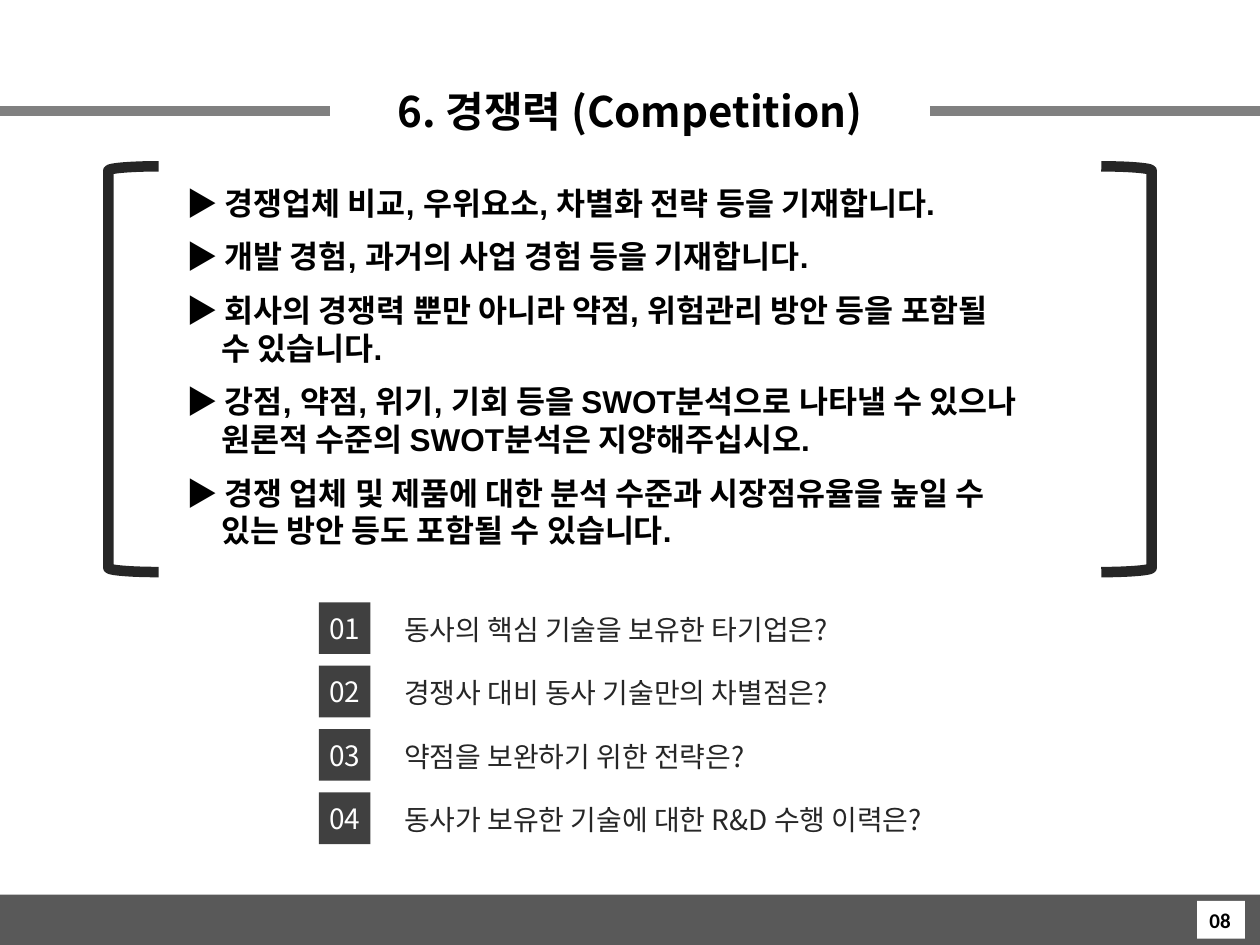
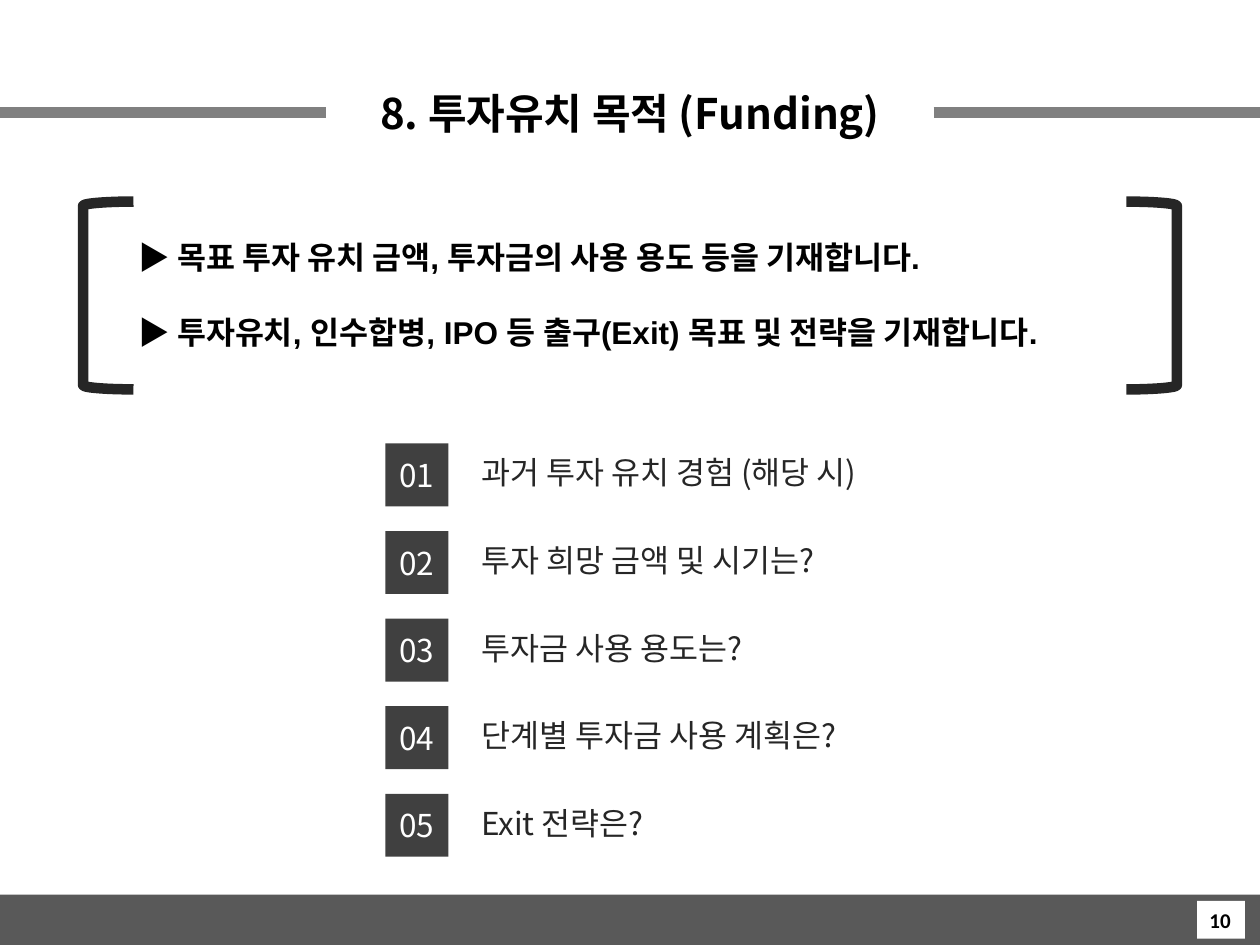
from pptx import Presentation
from pptx.dml.color import RGBColor
from pptx.enum.shapes import MSO_CONNECTOR as Connector, MSO_SHAPE as Shape
from pptx.enum.text import MSO_ANCHOR as Anchor, PP_ALIGN as Align
from pptx.oxml.ns import qn
from pptx.util import Inches, Pt
from lxml.etree import SubElement

BLACK = RGBColor(0x00, 0x00, 0x00)
WHITE = RGBColor(0xFF, 0xFF, 0xFF)
INK = RGBColor(0x26, 0x26, 0x26)
TILE = RGBColor(0x40, 0x40, 0x40)
BAND = RGBColor(0x59, 0x59, 0x59)
RULE = RGBColor(0x80, 0x80, 0x80)

COLS, ROWS = 100, 75
SANS, BODY, DIGITS = "Noto Sans CJK KR", "Arial", "Calibri"


class Deck:
    def __init__(self):
        self.prs = Presentation()
        self.prs.slide_width, self.prs.slide_height = Inches(10), Inches(7.5)
        self.s = None

    def x(self, cols):
        return round(self.prs.slide_width * cols / COLS)

    def y(self, rows):
        return round(self.prs.slide_height * rows / ROWS)

    def box(self, left, top, width, height):
        return self.x(left), self.y(top), self.x(width), self.y(height)

    def new_slide(self):
        self.s = self.prs.slides.add_slide(self.prs.slide_layouts[6])

    def style(self, p, size, color, name=SANS, bold=False, align=Align.LEFT):
        p.alignment = align
        f = p.font
        f.size, f.bold, f.name = Pt(size), bold, name
        f.color.rgb = color
        SubElement(f._element, qn("a:ea"), typeface=SANS)

    def rect(self, at, fill):
        sp = self.s.shapes.add_shape(Shape.RECTANGLE, *self.box(*at))
        sp.shadow.inherit = False
        sp.fill.solid()
        sp.fill.fore_color.rgb = fill
        sp.line.fill.background()
        return sp

    def label(self, at, fill, text, size, color, **style):
        tf = self.rect(at, fill).text_frame
        tf.word_wrap = True
        tf.vertical_anchor = Anchor.MIDDLE
        tf.text = text
        self.style(tf.paragraphs[0], size, color, **style)
        return tf

    def text(self, at, paragraphs, size, color, gap=0, hang=0, **style):
        tf = self.s.shapes.add_textbox(*self.box(*at)).text_frame
        tf.word_wrap = True
        tf.text = "\n".join(paragraphs)
        for i, p in enumerate(tf.paragraphs):
            self.style(p, size, color, **style)
            p.space_before = Pt(gap if i else 0)
            if hang:
                pPr = p._p.get_or_add_pPr()
                pPr.set("marL", str(self.x(hang)))
                pPr.set("indent", str(-self.x(hang)))

    def rule(self, start, end, row):
        ln = self.s.shapes.add_connector(
            Connector.STRAIGHT, self.x(start), self.y(row), self.x(end), self.y(row))
        ln.line.color.rgb = RULE
        ln.line.width = Pt(6)
        SubElement(ln._element.spPr, qn("a:effectLst"))

    def bracket(self, at, rotation):
        sp = self.s.shapes.add_shape(Shape.LEFT_BRACKET, *self.box(*at))
        sp.shadow.inherit = False
        sp.fill.background()
        sp.line.color.rgb = INK
        sp.line.width = Pt(6)
        sp.rotation = rotation

    def title(self, text, row, width, rule_length):
        self.label(((COLS - width) / 2, row - 2.5, width, 5), WHITE, text, 24, BLACK,
                   bold=True, align=Align.CENTER)
        self.rule(0, rule_length, row)
        self.rule(COLS - rule_length, COLS, row)

    def guide(self, at, points, gap, left, top, height):
        self.text(at, points, 18, BLACK, gap=gap, hang=2.8, name=BODY, bold=True)
        self.bracket((left, top, 4, height), 0)
        self.bracket((COLS - left - 4, top, 4, height), 180)

    def questions(self, items, left, top, side, pitch, text_left, width, size):
        for i, item in enumerate(items):
            row = top + i * pitch
            tf = self.label((left, row, side, side), TILE, f"{i + 1:02}", size, WHITE,
                            align=Align.CENTER)
            tf.margin_left = tf.margin_right = 0
            self.text((text_left, row + 0.3, width, side - 1), [item], size, INK)

    def footer(self, page):
        self.rect((0, 71, COLS, 4), BAND)
        self.label((95, 71.5, 3.8, 3), WHITE, page, 12, BLACK, name=DIGITS, bold=True)


def competition(deck):
    deck.new_slide()
    deck.title("6. 경쟁력 (Competition)", 8.8, 43.5, 26.2)
    deck.guide(
        (13.8, 14.1, 74.3, 31.3),
        ["▶ 경쟁업체 비교, 우위요소, 차별화 전략 등을 기재합니다.",
         "▶ 개발 경험, 과거의 사업 경험 등을 기재합니다.",
         "▶ 회사의 경쟁력 뿐만 아니라 약점, 위험관리 방안 등을 포함될\v수 있습니다.",
         "▶ 강점, 약점, 위기, 기회 등을 SWOT분석으로 나타낼 수 있으나\v"
         "원론적 수준의 SWOT분석은 지양해주십시오.",
         "▶ 경쟁 업체 및 제품에 대한 분석 수준과 시장점유율을 높일 수\v"
         "있는 방안 등도 포함될 수 있습니다."],
        gap=9, left=8.6, top=13.2, height=32.2)
    deck.questions(
        ["동사의 핵심 기술을 보유한 타기업은?",
         "경쟁사 대비 동사 기술만의 차별점은?",
         "약점을 보완하기 위한 전략은?",
         "동사가 보유한 기술에 대한 R&D 수행 이력은?"],
        left=25.3, top=47.8, side=4.1, pitch=5.03, text_left=31.1, width=47, size=16)
    deck.footer("08")


def funding(deck):
    deck.new_slide()
    deck.title("8. 투자유치 목적 (Funding)", 8.95, 65, 25.9)
    deck.guide(
        (10, 18.4, 79.9, 10.1),
        ["▶ 목표 투자 유치 금액, 투자금의 사용 용도 등을 기재합니다.",
         "▶ 투자유치, 인수합병, IPO 등 출구(Exit) 목표 및 전략을 기재합니다."],
        gap=21, left=6.6, top=16, height=14.9)
    deck.questions(
        ["과거 투자 유치 경험 (해당 시)",
         "투자 희망 금액 및 시기는?",
         "투자금 사용 용도는?",
         "단계별 투자금 사용 계획은?",
         "Exit 전략은?"],
        left=30.6, top=35.2, side=5, pitch=6.95, text_left=37.2, width=32.3, size=18)
    deck.footer("10")


def main():
    deck = Deck()
    competition(deck)
    funding(deck)
    deck.prs.save("out.pptx")


if __name__ == "__main__":
    main()
